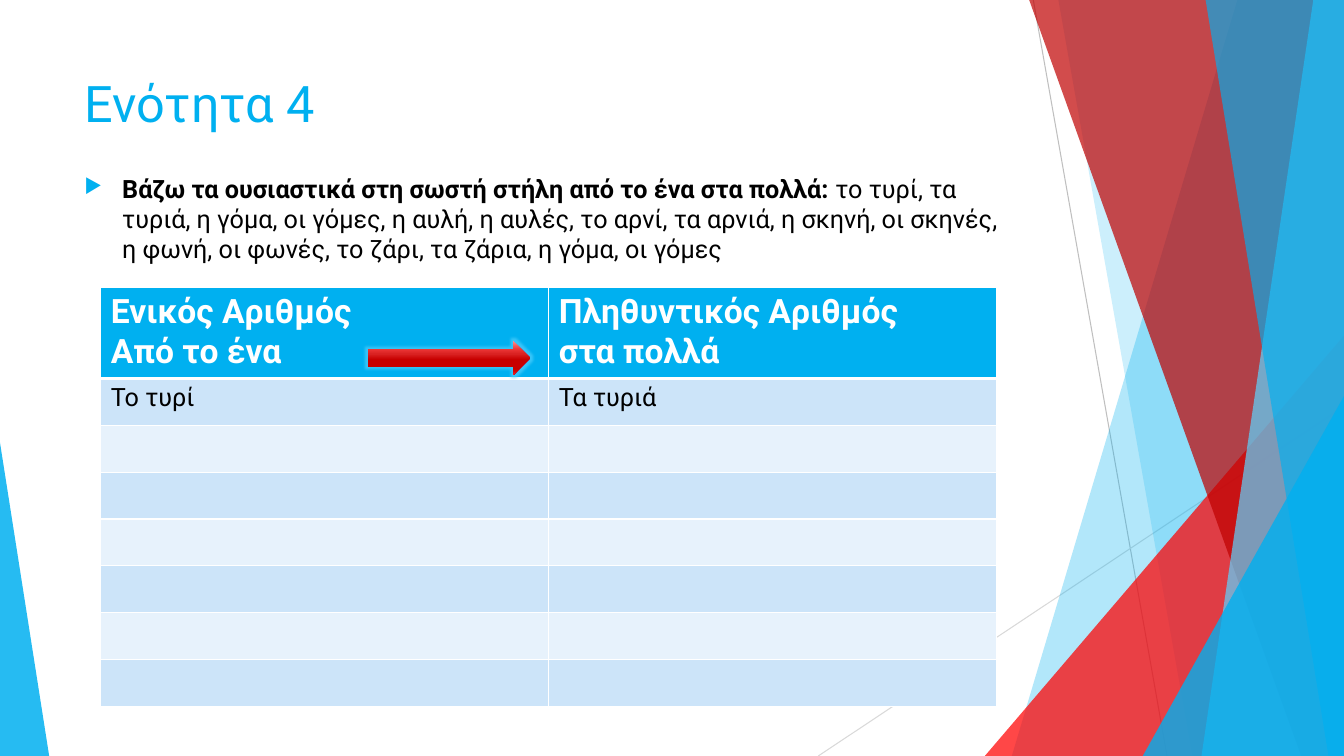
from lxml.etree import SubElement
from pptx import Presentation
from pptx.dml.color import RGBColor as Rgb
from pptx.enum.shapes import MSO_CONNECTOR as Connector, MSO_SHAPE as Preset
from pptx.enum.text import MSO_ANCHOR as Anchor, MSO_AUTO_SIZE as AutoSize, PP_ALIGN as Align
from pptx.oxml.ns import qn
from pptx.util import Cm, Pt

COLORS = {
    "blue": "00B0F0", "sky": "5DD4FF", "red": "FF0000", "crimson": "BF0000",
    "black": "000000", "white": "FFFFFF", "gray": "BFBFBF", "silver": "D9D9D9",
    "band": "CCE4F9", "light_band": "E7F2FC",
}
WIDTH, HEIGHT = 33.87, 19.05


class FacetSlide:
    font = "Roboto"

    def __init__(self, deck):
        self.slide = deck.slides.add_slide(deck.slide_layouts[5])
        self.shapes = self.slide.shapes

    def color(self, name):
        return Rgb.from_string(COLORS[name])

    def style(self, run, size, color, bold=False):
        run.font.name = self.font
        run.font.size = Pt(size)
        run.font.bold = bold
        run.font.color.rgb = self.color(color)

    def paint(self, shape, color, opacity):
        shape.shadow.inherit = False
        shape.line.fill.background()
        shape.fill.solid()
        shape.fill.fore_color.rgb = self.color(color)
        tint = shape._element.spPr.find(qn("a:solidFill"))[0]
        SubElement(tint, qn("a:alpha"), val=str(opacity * 1000))

    def line(self, start, end, color):
        ray = self.shapes.add_connector(
            Connector.STRAIGHT, *(Cm(v) for v in (*start, *end)))
        ray.line.color.rgb = self.color(color)
        ray.line.width = Pt(0.75)
        SubElement(ray._element.spPr, qn("a:effectLst"))

    def facet(self, top_left, bottom_left, color, opacity):
        top = -0.02
        corners = [(top_left, top), (WIDTH, top), (WIDTH, HEIGHT), (bottom_left, HEIGHT)]
        points = [(Cm(x), Cm(y)) for x, y in corners]
        outline = self.shapes.build_freeform(*points[0])
        outline.add_line_segments(points[1:], close=True)
        self.paint(outline.convert_to_shape(), color, opacity)

    def triangle(self, left, top, width, apex, color, opacity):
        wedge = self.shapes.add_shape(
            Preset.ISOSCELES_TRIANGLE, Cm(left), Cm(top), Cm(width), Cm(HEIGHT - top))
        wedge.adjustments[0] = apex
        self.paint(wedge, color, opacity)

    def title(self, text, left, top, width, height):
        heading = self.shapes.title
        heading.left, heading.top = Cm(left), Cm(top)
        heading.width, heading.height = Cm(width), Cm(height)
        frame = heading.text_frame
        frame.text = text
        frame.auto_size = AutoSize.NONE
        frame.vertical_anchor = Anchor.TOP
        frame.paragraphs[0].alignment = Align.LEFT
        self.style(frame.paragraphs[0].runs[0], 36, "blue")

    def bullet(self, instruction, words, left, top, width, height):
        box = self.shapes.add_textbox(Cm(left), Cm(top), Cm(width), Cm(height))
        box.text_frame.word_wrap = True
        paragraph = box.text_frame.paragraphs[0]
        paragraph.space_before = Pt(10)
        for text, bold in ((instruction, True), (words, False)):
            run = paragraph.add_run()
            run.text = text
            self.style(run, 18, "black", bold)
        properties = paragraph._p.get_or_add_pPr()
        properties.set("marL", str(Cm(0.95)))
        properties.set("indent", str(-Cm(0.95)))
        tint = SubElement(properties, qn("a:buClr"))
        SubElement(tint, qn("a:srgbClr"), val=COLORS["blue"])
        SubElement(properties, qn("a:buSzPct"), val="80000")
        SubElement(properties, qn("a:buChar"), char="▶")

    def borders(self, cell, widths):
        properties = cell._tc.get_or_add_tcPr()
        for position, (side, width) in enumerate(widths.items()):
            edge = SubElement(properties, qn(f"a:ln{side}"), w=str(Pt(width)))
            fill = SubElement(edge, qn("a:solidFill"))
            SubElement(fill, qn("a:srgbClr"), val=COLORS["white"])
            properties.insert(position, edge)

    def table(self, rows, left, top, column_width, header_height, row_height):
        columns = len(rows[0])
        height = header_height + row_height * (len(rows) - 1)
        grid = self.shapes.add_table(
            len(rows), columns, Cm(left), Cm(top),
            Cm(column_width * columns), Cm(height)).table
        for column in grid.columns:
            column.width = Cm(column_width)
        for index, texts in enumerate(rows):
            header = index == 0
            grid.rows[index].height = Cm(header_height if header else row_height)
            fill = "blue" if header else ("light_band", "band")[index % 2]
            look = (24, "white", True) if header else (18, "black", False)
            widths = {"L": 1, "R": 1, "T": 3 if index == 1 else 1, "B": 3 if header else 1}
            for column, text in enumerate(texts):
                cell = grid.cell(index, column)
                cell.text_frame.text = text
                cell.fill.solid()
                cell.fill.fore_color.rgb = self.color(fill)
                for paragraph in cell.text_frame.paragraphs:
                    for run in paragraph.runs:
                        self.style(run, *look)
                self.borders(cell, widths)

    def arrow(self, left, top, width, height, stops):
        pointer = self.shapes.add_shape(
            Preset.RIGHT_ARROW, Cm(left), Cm(top), Cm(width), Cm(height))
        pointer.shadow.inherit = False
        pointer.line.fill.background()
        pointer.fill.gradient()
        pointer.fill.gradient_angle = 270
        properties = pointer._element.spPr
        gradient = properties.find(qn("a:gradFill")).find(qn("a:gsLst"))
        gradient.clear()
        for position, color in stops:
            stop = SubElement(gradient, qn("a:gs"), pos=str(position * 1000))
            SubElement(stop, qn("a:srgbClr"), val=color)
        glow = SubElement(properties.find(qn("a:effectLst")), qn("a:glow"), rad=str(Pt(4)))
        tint = SubElement(glow, qn("a:srgbClr"), val=COLORS["sky"])
        SubElement(tint, qn("a:alpha"), val="60000")


def main():
    deck = Presentation()
    deck.slide_width, deck.slide_height = Cm(WIDTH), Cm(HEIGHT)
    page = FacetSlide(deck)

    page.line((26.04, 0), (29.41, HEIGHT), "gray")
    page.line((WIDTH, 10.24), (20.62, HEIGHT), "silver")
    page.facet(31.19, 25.5, "blue", 30)
    page.facet(26.67, 30.05, "blue", 20)
    page.triangle(24.82, 8.46, 9.05, 1, "red", 72)
    page.facet(25.93, 32.79, "crimson", 70)
    page.facet(33.1, 30.28, "sky", 70)
    page.facet(30.38, 33.48, "blue", 65)
    page.triangle(28.8, 9.98, 5.07, 1, "blue", 80)
    page.triangle(0, 11.15, 1.24, 0, "blue", 85)

    page.title("Ενότητα 4", 1.88, 1.7, 23.88, 3.66)
    page.bullet(
        "Βάζω τα ουσιαστικά στη σωστή στήλη από το ένα στα πολλά: ",
        "το τυρί, τα τυριά, η γόμα, οι γόμες, η αυλή, η αυλές, το αρνί, τα αρνιά, "
        "η σκηνή, οι σκηνές, η φωνή, οι φωνές, το ζάρι, τα ζάρια, η γόμα, οι γόμες",
        1.88, 4.24, 23.88, 12.55)
    nouns = [
        ("Ενικός Αριθμός\nΑπό το ένα", "Πληθυντικός Αριθμός\nστα πολλά"),
        ("Το τυρί", "Τα τυριά"),
    ]
    page.table(nouns + [("", "")] * 6, 2.54, 7.25, 11.29, 2.27, 1.18)
    page.arrow(9.27, 8.59, 4.09, 0.86, [
        (0, "FF9090"), (25, "EC3535"), (38, "DA2323"), (55, "C80000"),
        (80, "C60000"), (88, "D10000"), (100, "FF2222")])

    deck.save("out.pptx")


if __name__ == "__main__":
    main()
